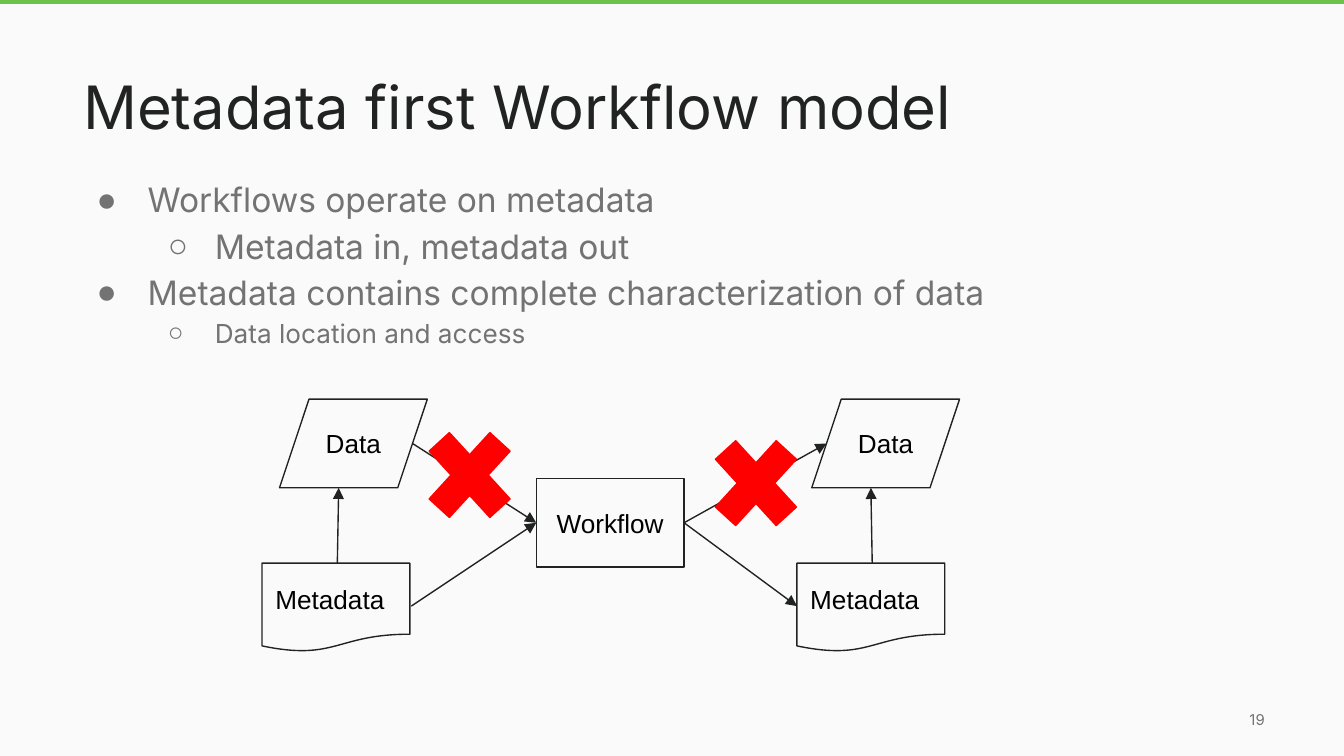
from dataclasses import dataclass
from typing import Optional

from lxml.etree import SubElement
from pptx import Presentation
from pptx.dml.color import RGBColor
from pptx.enum.shapes import MSO_CONNECTOR, MSO_SHAPE
from pptx.enum.text import MSO_ANCHOR, PP_ALIGN
from pptx.oxml.ns import qn
from pptx.util import Inches, Pt

GREEN = RGBColor(0x6C, 0xC2, 0x4A)
PAPER = RGBColor(0xFA, 0xFA, 0xFA)
INK = RGBColor(0x21, 0x23, 0x22)
GREY = RGBColor(0x73, 0x73, 0x73)
BLACK = RGBColor(0, 0, 0)
RED = RGBColor(0xFF, 0, 0)

NODE_WIDTH, NODE_HEIGHT = 1.1, 0.66
CROSS_WIDTH, CROSS_HEIGHT = 0.87, 0.95
LINE_WIDTH = Pt(0.75)


@dataclass
class Bullet:
    text: str
    level: int = 0
    size: int = 18


@dataclass
class Node:
    text: str
    kind: MSO_SHAPE
    left: float
    top: float
    align: PP_ALIGN = PP_ALIGN.CENTER


@dataclass
class Arrow:
    start: tuple[float, float]
    end: tuple[float, float]


BULLETS = [
    Bullet("Workflows operate on metadata"),
    Bullet("Metadata in, metadata out", level=1),
    Bullet("Metadata contains complete characterization of data"),
    Bullet("Data location and access", level=1, size=14),
]
NODES = [
    Node("Data", MSO_SHAPE.FLOWCHART_DATA, 2.08, 2.97),
    Node("Workflow", MSO_SHAPE.FLOWCHART_PROCESS, 3.99, 3.56),
    Node("Data", MSO_SHAPE.FLOWCHART_DATA, 6.04, 2.97),
    Node("Metadata", MSO_SHAPE.FLOWCHART_DOCUMENT, 1.95, 4.19, PP_ALIGN.LEFT),
    Node("Metadata", MSO_SHAPE.FLOWCHART_DOCUMENT, 5.93, 4.19, PP_ALIGN.LEFT),
]
WORKFLOW_IN, WORKFLOW_OUT = (3.99, 3.89), (5.09, 3.89)
ARROWS = [
    Arrow(WORKFLOW_OUT, (6.15, 3.3)),
    Arrow((3.07, 3.3), WORKFLOW_IN),
    Arrow((3.06, 4.51), WORKFLOW_IN),
    Arrow(WORKFLOW_OUT, (5.93, 4.51)),
    Arrow((2.51, 4.19), (2.52, 3.63)),
    Arrow((6.49, 4.19), (6.48, 3.63)),
]
CROSSES = [(3.06, 3.06), (5.19, 3.12)]


def add_text(frame, text: str, *, size: int, color: RGBColor, font: str = "Inter",
             align: PP_ALIGN = PP_ALIGN.LEFT, anchor: MSO_ANCHOR = MSO_ANCHOR.MIDDLE):
    """Write one paragraph, reusing the empty first one, and return it."""
    frame.word_wrap = True
    frame.vertical_anchor = anchor
    frame.margin_left = frame.margin_right = Inches(0.1)
    frame.margin_top = frame.margin_bottom = Inches(0.1)
    paragraph = frame.paragraphs[0] if not frame.text else frame.add_paragraph()
    paragraph.alignment = align
    run = paragraph.add_run()
    run.text = text
    run.font.size = Pt(size)
    run.font.name = font
    run.font.color.rgb = color
    return paragraph


def add_box(slide, left: float, top: float, width: float, height: float):
    box = slide.shapes.add_textbox(Inches(left), Inches(top), Inches(width), Inches(height))
    return box.text_frame


def add_shape(slide, kind: MSO_SHAPE, left: float, top: float, width: float, height: float,
              fill: Optional[RGBColor] = None, line: Optional[RGBColor] = None):
    shape = slide.shapes.add_shape(kind, Inches(left), Inches(top), Inches(width), Inches(height))
    shape.shadow.inherit = False
    if fill is None:
        shape.fill.background()
    else:
        shape.fill.solid()
        shape.fill.fore_color.rgb = fill
    if line is None:
        shape.line.fill.background()
    else:
        shape.line.color.rgb = line
        shape.line.width = LINE_WIDTH
    return shape


def add_bullet(frame, bullet: Bullet) -> None:
    paragraph = add_text(frame, bullet.text, size=bullet.size, color=GREY, anchor=MSO_ANCHOR.TOP)
    paragraph.level = bullet.level
    paragraph.line_spacing = 1.15
    properties = paragraph._p.get_or_add_pPr()
    properties.set("marL", str(Inches(0.5 * (bullet.level + 1))))
    properties.set("indent", str(Inches(-0.35 if bullet.level else -0.38)))
    color = SubElement(properties, qn("a:buClr"))
    SubElement(color, qn("a:srgbClr"), val=str(GREY))
    SubElement(properties, qn("a:buFont"), typeface="Arial")
    SubElement(properties, qn("a:buChar"), char="○" if bullet.level else "●")


def add_node(slide, node: Node) -> None:
    shape = add_shape(slide, node.kind, node.left, node.top, NODE_WIDTH, NODE_HEIGHT, line=INK)
    add_text(shape.text_frame, node.text, size=14, color=BLACK, font="Arial", align=node.align)


def add_arrow(slide, arrow: Arrow) -> None:
    points = [Inches(value) for value in (*arrow.start, *arrow.end)]
    connector = slide.shapes.add_connector(MSO_CONNECTOR.STRAIGHT, *points)
    connector.line.color.rgb = INK
    connector.line.width = LINE_WIDTH
    SubElement(connector.line._get_or_add_ln(), qn("a:tailEnd"), type="triangle")
    SubElement(connector._element.spPr, qn("a:effectLst"))


def main() -> None:
    presentation = Presentation()
    presentation.slide_width = Inches(10)
    presentation.slide_height = Inches(10 * 9 / 16)
    slide = presentation.slides.add_slide(presentation.slide_layouts[6])

    # Top band and page ground, which reaches the bottom edge
    add_shape(slide, MSO_SHAPE.RECTANGLE, 0, 0, 10, 0.03, fill=GREEN)
    add_shape(slide, MSO_SHAPE.RECTANGLE, 0, 0.03, 10, 10 * 9 / 16 - 0.03, fill=PAPER)

    # Title and bullets
    add_text(add_box(slide, 0.52, 0.45, 8.99, 0.7), "Metadata first Workflow model",
             size=32, color=INK, anchor=MSO_ANCHOR.BOTTOM)
    body = add_box(slide, 0.5, 1.19, 8.99, 3.76)
    for bullet in BULLETS:
        add_bullet(body, bullet)

    # Workflow diagram, with the direct data paths crossed out
    for node in NODES:
        add_node(slide, node)
    for arrow in ARROWS:
        add_arrow(slide, arrow)
    for left, top in CROSSES:
        cross = add_shape(slide, MSO_SHAPE.MATH_MULTIPLY, left, top, CROSS_WIDTH, CROSS_HEIGHT,
                          fill=RED, line=RED)
        cross.adjustments[0] = 0.235

    # Page number
    add_text(add_box(slide, 8.91, 5.14, 0.6, 0.43), "19",
             size=8, color=GREY, align=PP_ALIGN.RIGHT)

    presentation.save("out.pptx")


if __name__ == "__main__":
    main()
